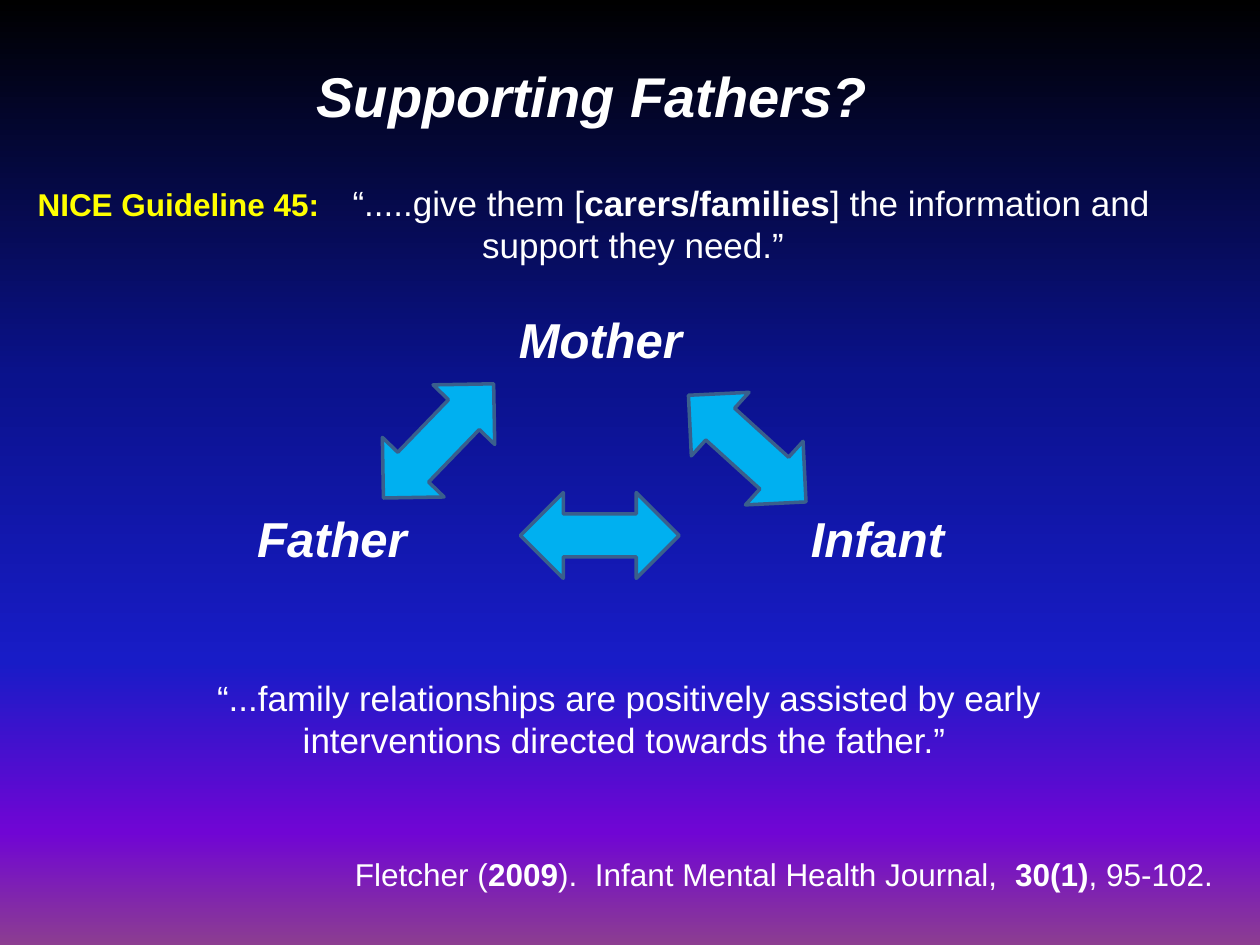
import pptx
import pptx.dml.color
import pptx.enum.shapes
import pptx.enum.text
import pptx.oxml
import pptx.oxml.ns
import pptx.util

Pt = pptx.util.Pt
RGBColor = pptx.dml.color.RGBColor
Align = pptx.enum.text.PP_ALIGN
Anchor = pptx.enum.text.MSO_ANCHOR

WHITE = RGBColor(0xFF, 0xFF, 0xFF)
YELLOW = RGBColor(0xFF, 0xFF, 0x00)
SKY_BLUE = RGBColor(0x00, 0xB0, 0xF0)
SLATE_BLUE = RGBColor(0x3A, 0x5F, 0x8C)
BACKGROUND_STOPS = [
    (0, RGBColor(0x00, 0x00, 0x00)),
    (40, RGBColor(0x0A, 0x12, 0x8C)),
    (70, RGBColor(0x18, 0x1C, 0xC7)),
    (88, RGBColor(0x70, 0x05, 0xD4)),
    (100, RGBColor(0x8C, 0x3D, 0x91)),
]

BOLD = {"bold": True}
HEADING = {"bold": True, "italic": True}
ARROW_SIZE = (49, 90.7)


class SlideBuilder:
    font_name = "Arial"

    def __init__(self, presentation):
        self.slide = presentation.slides.add_slide(presentation.slide_layouts[6])

    def background(self, stops):
        """Fill the background from top to bottom with (percent, colour) stops."""
        fill = self.slide.background.fill
        fill.gradient()
        fill.gradient_angle = 270
        background = self.slide.element.find(".//" + pptx.oxml.ns.qn("p:bg"))
        stop_list = background.find(".//" + pptx.oxml.ns.qn("a:gsLst"))
        for stop in list(stop_list):
            stop_list.remove(stop)
        for percent, color in stops:
            stop_list.append(pptx.oxml.parse_xml(
                f'<a:gs {pptx.oxml.ns.nsdecls("a")} pos="{percent * 1000}">'
                f'<a:srgbClr val="{color}"/></a:gs>'))

    def text(self, box, paragraphs, size, align=Align.LEFT,
             anchor=Anchor.TOP, wrap=True):
        """Add a text box; each paragraph is a list of (words, format) runs."""
        shape = self.slide.shapes.add_textbox(*map(Pt, box))
        frame = shape.text_frame
        frame.word_wrap = wrap
        frame.vertical_anchor = anchor
        for index, runs in enumerate(paragraphs):
            paragraph = frame.paragraphs[0] if index == 0 else frame.add_paragraph()
            paragraph.alignment = align
            for words, changes in runs:
                run = paragraph.add_run()
                run.text = words
                values = {"name": self.font_name, "size": Pt(size),
                          "color": WHITE, **changes}
                run.font.color.rgb = values.pop("color")
                for name, value in values.items():
                    setattr(run.font, name, value)
        return shape

    def heading(self, box, words, size, anchor=Anchor.TOP):
        self.text(box, [[(words, HEADING)]], size, Align.CENTER, anchor)

    def double_arrow(self, left, top, rotation):
        shape = self.slide.shapes.add_shape(
            pptx.enum.shapes.MSO_SHAPE.UP_DOWN_ARROW,
            *map(Pt, (left, top, *ARROW_SIZE)))
        shape.rotation = rotation
        shape.shadow.inherit = False
        shape.fill.solid()
        shape.fill.fore_color.rgb = SKY_BLUE
        shape.line.color.rgb = SLATE_BLUE
        shape.line.width = Pt(2)


def main():
    presentation = pptx.Presentation()
    presentation.slide_width = Pt(720)
    presentation.slide_height = Pt(540)

    builder = SlideBuilder(presentation)
    builder.background(BACKGROUND_STOPS)
    builder.heading((14.4, 9.4, 648, 90), "Supporting Fathers?", 32, Anchor.MIDDLE)

    guideline = builder.text((14.4, 100, 689, 80), [
        [("NICE Guideline 45:\t", {"bold": True, "color": YELLOW, "size": Pt(18)}),
         ("“.....give them [", {}),
         ("carers/families", BOLD),
         ("] the information and", {})],
        [("support they need.”", {})],
    ], 20)
    second_line = guideline.text_frame.paragraphs[1]
    second_line._p.get_or_add_pPr().set("marL", str(Pt(254)))

    for words, left, top, width in [
        ("Mother", 280.8, 173.5, 124.6),
        ("Father", 127.4, 287.3, 124.6),
        ("Infant", 393.8, 287.3, 215.3),
    ]:
        builder.heading((left, top, width, 63.4), words, 28)

    for left, top, rotation in [
        (226.1, 206.6, 44),
        (402.5, 211, 132.2),
        (318.2, 260.6, 90),
    ]:
        builder.double_arrow(left, top, rotation)

    builder.text((76.3, 383, 566.6, 55.4), [[
        ("“...family relationships are positively assisted by early "
         "interventions directed towards the father.” ", {}),
    ]], 20, Align.CENTER)
    builder.text((195.8, 485.3, 509, 28.8), [[
        ("Fletcher (", {}),
        ("2009", BOLD),
        (").  Infant Mental Health Journal,  ", {}),
        ("30(1)", BOLD),
        (", 95-102.", {}),
    ]], 18, wrap=False)

    presentation.save("out.pptx")


if __name__ == "__main__":
    main()
